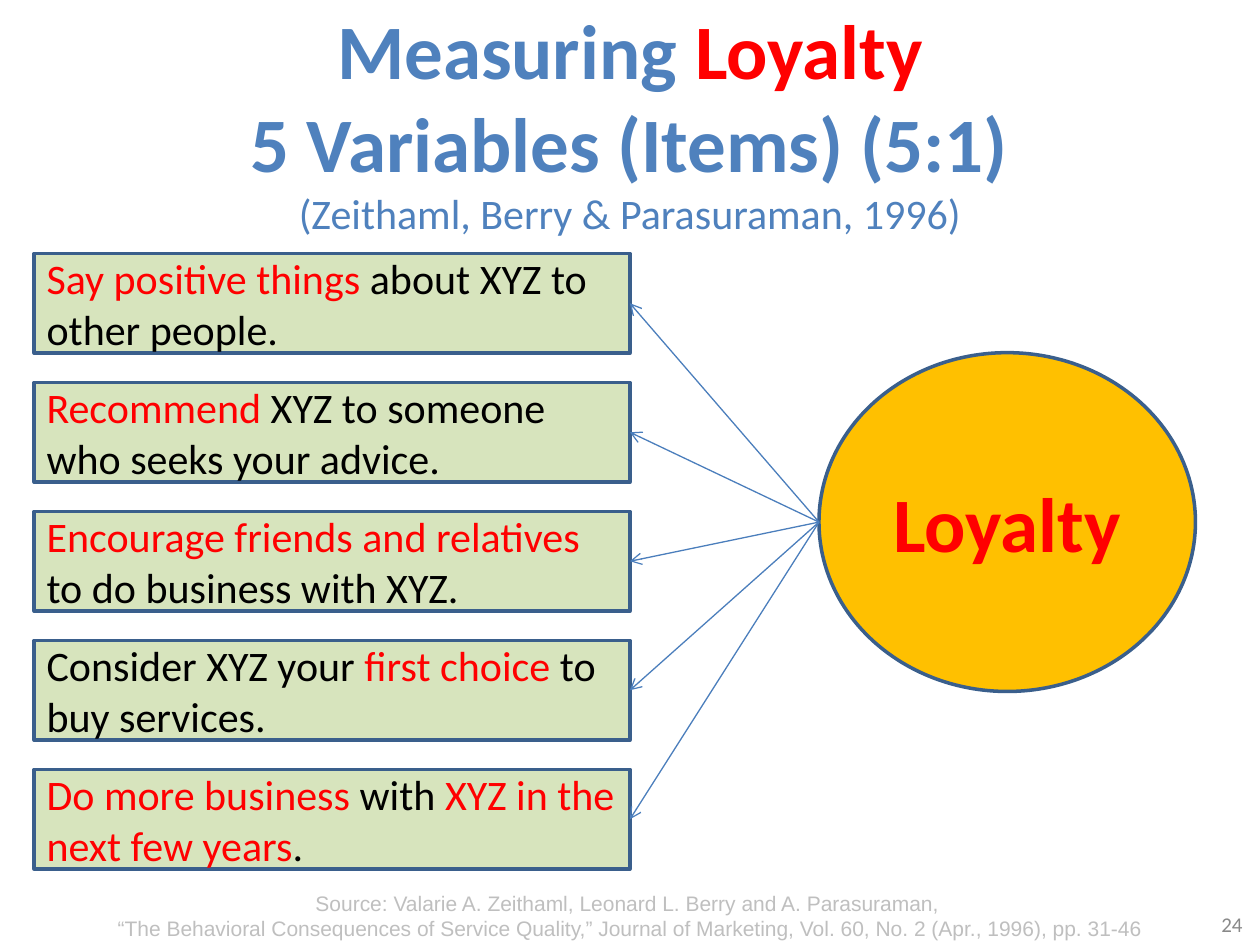
from lxml import etree
from pptx import Presentation
from pptx.dml.color import RGBColor
from pptx.enum.shapes import MSO_CONNECTOR, MSO_SHAPE
from pptx.enum.text import MSO_ANCHOR, MSO_AUTO_SIZE, PP_ALIGN
from pptx.oxml.ns import qn
from pptx.util import Cm, Pt

RECT, OVAL = MSO_SHAPE.RECTANGLE, MSO_SHAPE.OVAL
STRAIGHT = MSO_CONNECTOR.STRAIGHT
TOP, MIDDLE = MSO_ANCHOR.TOP, MSO_ANCHOR.MIDDLE
LEFT, CENTER, RIGHT = PP_ALIGN.LEFT, PP_ALIGN.CENTER, PP_ALIGN.RIGHT
NO_FIT = MSO_AUTO_SIZE.NONE
RIGHT_SITE = 3

COLORS = {
    "blue": "4F81BD", "red": "FF0000", "black": "000000", "gold": "FFC000",
    "green": "D7E4BD", "border": "3A5F8C", "arrow": "4B7EBC",
    "source": "BFBFBF", "number": "898989",
}
HEADING = {"size": Pt(44), "name": "Calibri", "bold": True}
BODY = {"size": Pt(24), "name": "Calibri", "bold": False}
SOURCE = {"size": Pt(12), "name": "Arial"}
NUMBER = {"size": Pt(12), "name": "Calibri"}

TITLE = [
    ("Measuring ", "blue", HEADING),
    ("Loyalty\n", "red", HEADING),
    ("5 Variables (Items) (5:1)\n", "blue", HEADING),
    ("(Zeithaml, Berry & Parasuraman, 1996)", "blue", BODY),
]
ITEMS = [
    [("Say positive things", "red"), (" about XYZ to other people.", "black")],
    [("Recommend", "red"), (" XYZ to someone who seeks your advice.", "black")],
    [("Encourage friends and relatives ", "red"),
     ("to do business with XYZ.", "black")],
    [("Consider XYZ your ", "black"), ("first choice ", "red"),
     ("to buy services.", "black")],
    [("Do more business ", "red"), ("with ", "black"),
     ("XYZ in the next few years", "red"), (".", "black")],
]
CITATION = (
    "Source: Valarie A. Zeithaml, Leonard L. Berry and A. Parasuraman, \n"
    "“The Behavioral Consequences of Service Quality,” Journal of Marketing, "
    "Vol. 60, No. 2 (Apr., 1996), pp. 31-46"
)
ITEM_LEFT, ITEM_TOP, ITEM_W, ITEM_H, ITEM_PITCH = 0.69, 5.11, 12.01, 2.01, 2.6
OVAL_LEFT, OVAL_TOP, OVAL_W, OVAL_H = 16.51, 7.11, 7.59, 6.83


def rgb(name):
    """Return the named colour."""
    return RGBColor.from_string(COLORS[name])


def write(sp, runs, align, anchor=MIDDLE):
    """Fill a shape with one paragraph of (text, colour, format) runs."""
    tf = sp.text_frame
    tf.word_wrap, tf.auto_size, tf.vertical_anchor = True, NO_FIT, anchor
    p = tf.paragraphs[0]
    p.alignment = align
    for text, color, fmt in runs:
        for i, part in enumerate(text.split("\n")):
            if i:
                p.add_line_break()
            if not part:
                continue
            r = p.add_run()
            r.text = part
            r.font.color.rgb = rgb(color)
            for key, value in fmt.items():
                setattr(r.font, key, value)


def add_title(slide):
    """Place and format the title placeholder."""
    sp = slide.shapes.title
    sp.left, sp.top, sp.width, sp.height = Cm(1.27), Cm(0.33), Cm(22.86), Cm(4.19)
    write(sp, TITLE, CENTER)


def add_text(slide, box, runs, align, anchor):
    """Add a text box at box, given in centimetres."""
    sp = slide.shapes.add_textbox(*map(Cm, box))
    write(sp, runs, align, anchor)


def add_block(slide, kind, box, fill, runs, align):
    """Add a filled, outlined shape with text."""
    sp = slide.shapes.add_shape(kind, *map(Cm, box))
    sp.shadow.inherit = False
    sp.fill.solid()
    sp.fill.fore_color.rgb = rgb(fill)
    sp.line.color.rgb = rgb("border")
    sp.line.width = Pt(2)
    write(sp, runs, align)
    return sp


def add_arrow(slide, source, target):
    """Add an arrow from the left of source to the right of target."""
    y = source.top + source.height // 2
    cxn = slide.shapes.add_connector(STRAIGHT, source.left, y, source.left, y)
    cxn.end_connect(target, RIGHT_SITE)
    cxn.line.color.rgb = rgb("arrow")
    cxn.line.width = Pt(0.75)
    etree.SubElement(cxn.line._get_or_add_ln(), qn("a:tailEnd"), type="arrow")
    etree.SubElement(cxn._element.spPr, qn("a:effectLst"))


def main():
    """Build and save the slide."""
    prs = Presentation()
    prs.slide_width, prs.slide_height = Cm(25.4), Cm(19.05)
    slide = prs.slides.add_slide(prs.slide_layouts[5])
    add_title(slide)
    add_text(slide, (19.38, 18.11, 5.92, 1.02), [("24", "number", NUMBER)],
             RIGHT, MIDDLE)
    loyalty = add_block(slide, OVAL, (OVAL_LEFT, OVAL_TOP, OVAL_W, OVAL_H),
                        "gold", [("Loyalty", "red", HEADING)], CENTER)
    items = []
    for i, parts in enumerate(ITEMS):
        box = (ITEM_LEFT, ITEM_TOP + i * ITEM_PITCH, ITEM_W, ITEM_H)
        runs = [(text, color, BODY) for text, color in parts]
        items.append(add_block(slide, RECT, box, "green", runs, LEFT))
    for item in items:
        add_arrow(slide, loyalty, item)
    add_text(slide, (1.93, 17.83, 21.56, 1.3), [(CITATION, "source", SOURCE)],
             CENTER, TOP)
    prs.save("out.pptx")


if __name__ == "__main__":
    main()
